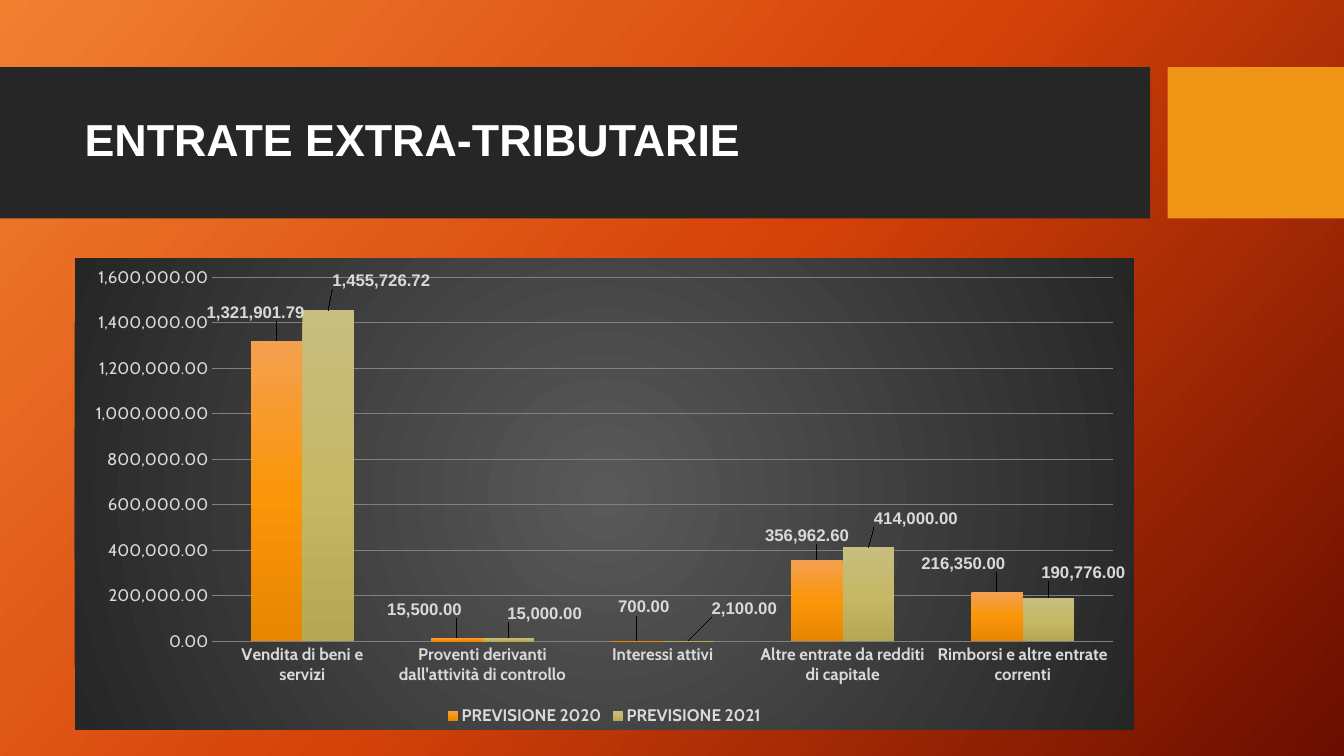
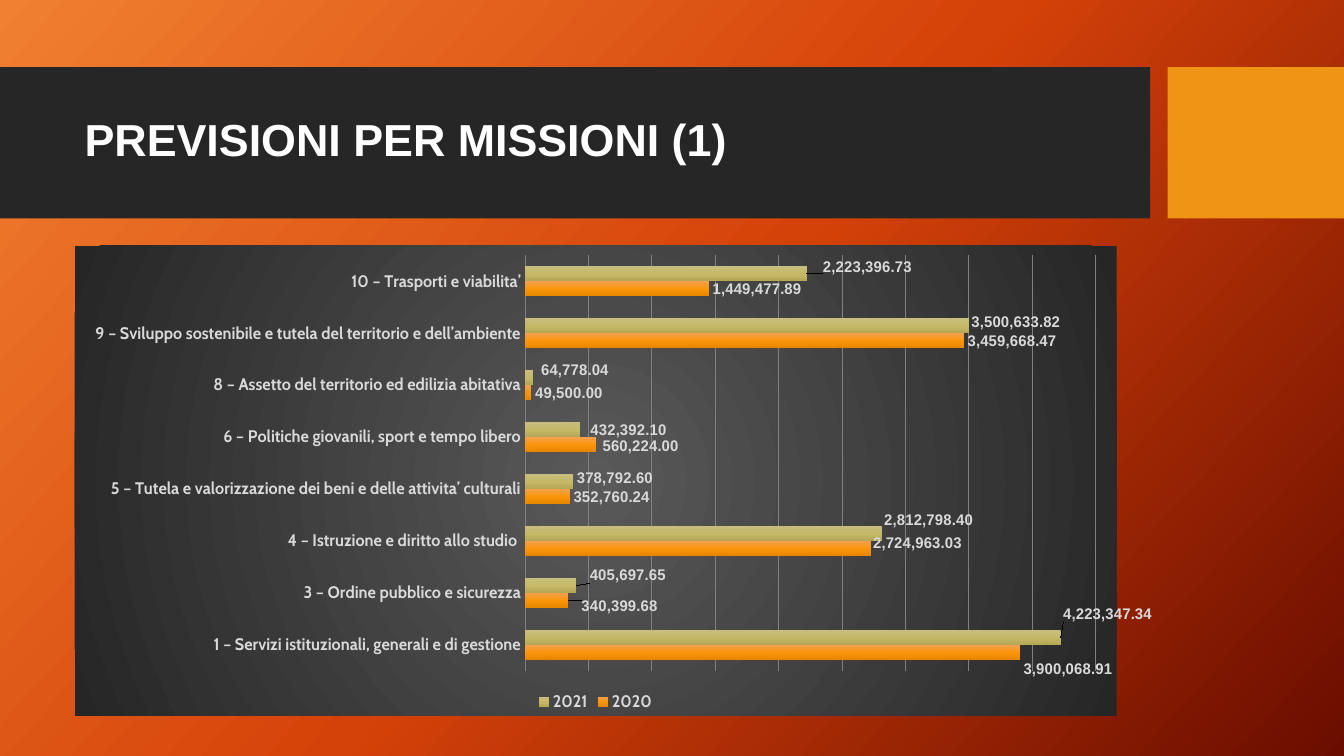
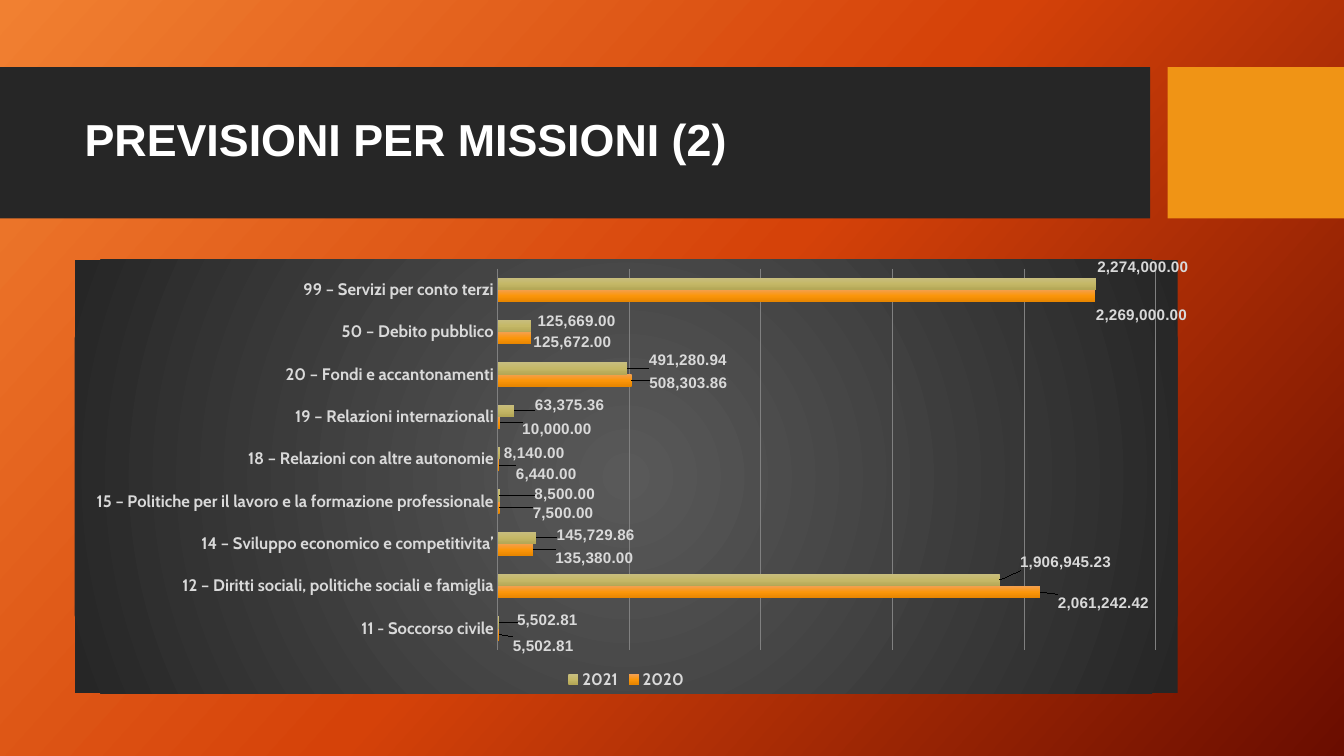
"""Build three budget slides, each with a banded title and a clustered chart."""
from dataclasses import dataclass

from pptx import Presentation
from pptx.chart.data import CategoryChartData
from pptx.dml.color import RGBColor
from pptx.enum.chart import XL_CHART_TYPE, XL_LABEL_POSITION, XL_LEGEND_POSITION, XL_TICK_MARK
from pptx.enum.shapes import MSO_SHAPE
from pptx.enum.text import MSO_ANCHOR
from pptx.oxml import parse_xml
from pptx.oxml.ns import nsdecls, qn
from pptx.util import Pt

COLUMNS = XL_CHART_TYPE.COLUMN_CLUSTERED
BARS = XL_CHART_TYPE.BAR_CLUSTERED
OUTSIDE_END = XL_LABEL_POSITION.OUTSIDE_END
LEGEND_BOTTOM = XL_LEGEND_POSITION.BOTTOM
NO_TICKS = XL_TICK_MARK.NONE
RECTANGLE = MSO_SHAPE.RECTANGLE
MIDDLE = MSO_ANCHOR.MIDDLE
FILL_TAGS = [qn(f"a:{name}") for name in ("noFill", "solidFill", "gradFill")]


@dataclass(frozen=True)
class Theme:
    """Hold the colours, fonts and type sizes shared by the slides."""

    band: str = "262626"
    accent: str = "F09415"
    title: str = "FFFFFF"
    label: str = "D9D9D9"
    grid: str = "808080"
    backdrop: tuple = ((0, "F18031"), (50, "D54209"), (100, "6A0D00"))
    panel: tuple = ((0, "595959"), (100, "262626"))
    series: tuple = (
        ((0, "F4A050"), (50, "FB960A"), (100, "E88600")),
        ((0, "C8BE7F"), (50, "C5B867"), (100, "B4A756")),
    )
    heading_font: str = "Arial"
    chart_font: str = "Cabin"
    title_size: int = 32
    axis_size: int = 12
    base_size: int = 10
    number_format: str = "#,##0.00"


THEME = Theme()


@dataclass(frozen=True)
class Series:
    """Hold one chart series and its label shifts in points."""

    name: str
    values: tuple
    shifts: dict


@dataclass(frozen=True)
class Budget:
    """Hold the content of one slide."""

    title: str
    kind: int
    frame: tuple
    maximum: int
    step: int
    label_size: int
    categories: tuple
    series: tuple


BUDGETS = (
    Budget(
        "ENTRATE EXTRA-TRIBUTARIE", COLUMNS, (53.3, 184.3, 756.7, 337), 1600000, 200000, 12,
        (
            "Vendita di beni e servizi",
            "Proventi derivanti dall'attività di controllo",
            "Interessi attivi",
            "Altre entrate da redditi di capitale",
            "Rimborsi e altre entrate correnti",
        ),
        (
            Series(
                "PREVISIONE 2020",
                (1321901.79, 15500, 700, 356962.6, 216350),
                {0: (-15, -11), 1: (-23, -11), 2: (5, -15), 3: (-7, -8), 4: (-24, -11)},
            ),
            Series(
                "PREVISIONE 2021",
                (1455726.72, 15000, 2100, 414000, 190776),
                {0: (38, -12), 1: (26, -8), 2: (40, -14), 3: (34, -11), 4: (25, -9)},
            ),
        ),
    ),
    Budget(
        "PREVISIONI PER MISSIONI (1)", BARS, (53.3, 175.7, 769.7, 335.5), 4500000, 500000, 11,
        (
            "1 – Servizi istituzionali, generali e di gestione",
            "3 – Ordine pubblico e sicurezza",
            "4 – Istruzione e diritto allo studio ",
            "5 – Tutela e valorizzazione dei beni e delle attivita’ culturali",
            "6 – Politiche giovanili, sport e tempo libero",
            "8 – Assetto del territorio ed edilizia abitativa",
            "9 – Sviluppo sostenibile e tutela del territorio e dell’ambiente",
            "10 – Trasporti e viabilita’",
        ),
        (
            Series(
                "2020",
                (3900068.91, 340399.68, 2724963.03, 352760.24, 560224, 49500,
                 3459668.47, 1449477.89),
                {0: (0, 12), 1: (7, 4), 2: (-1, -4), 4: (2, 1)},
            ),
            Series(
                "2021",
                (4223347.34, 405697.65, 2812798.4, 378792.6, 432392.1, 64778.04,
                 3500633.82, 2223396.73),
                {0: (-1, -17), 1: (7, -8), 2: (-1, -10), 3: (0, -3), 4: (5, 0),
                 5: (3, -6), 6: (-1, -3), 7: (9, -5)},
            ),
        ),
    ),
    Budget(
        "PREVISIONI PER MISSIONI (2)", BARS, (53.3, 184.3, 795.6, 311), 2500000, 500000, 11,
        (
            "11 - Soccorso civile",
            "12 – Diritti sociali, politiche sociali e famiglia",
            "14 – Sviluppo economico e competitivita’",
            "15 – Politiche per il lavoro e la formazione professionale",
            "18 – Relazioni con altre autonomie",
            "19 – Relazioni internazionali",
            "20 – Fondi e accantonamenti",
            "50 – Debito pubblico",
            "99 – Servizi per conto terzi",
        ),
        (
            Series(
                "2020",
                (5502.81, 2061242.42, 135380, 7500, 6440, 10000, 508303.86, 125672, 2269000),
                {0: (7, 8), 1: (10, 8), 2: (13, 6), 3: (21, 4), 4: (9, 6), 5: (13, 4),
                 6: (10, 2), 7: (-1, 3), 8: (-2, 14)},
            ),
            Series(
                "2021",
                (5502.81, 1906945.23, 145729.86, 8500, 8140, 63375.36, 491280.94, 125669,
                 2274000),
                {0: (10, -2), 1: (12, -13), 2: (12, -2), 3: (22, -1), 5: (12, -4),
                 6: (13, -6), 7: (2, -4), 8: (-2, -12)},
            ),
        ),
    ),
)


def style_font(font, size, color=THEME.label, name=THEME.chart_font, bold=True):
    """Set the size, colour, typeface and weight of a font."""
    font.size = Pt(size)
    font.color.rgb = RGBColor.from_string(color)
    font.name = name
    font.bold = bold


def paint_gradient(properties, stops, angle=None):
    """Give a properties element a linear gradient, or a radial one without an angle."""
    for child in list(properties):
        if child.tag in FILL_TAGS:
            properties.remove(child)
    marks = "".join(
        f'<a:gs pos="{place * 1000}"><a:srgbClr val="{color}"/></a:gs>' for place, color in stops
    )
    if angle is None:
        shade = ('<a:path path="circle"><a:fillToRect l="50000" t="50000" r="50000" b="50000"/>'
                 "</a:path>")
    else:
        shade = f'<a:lin ang="{angle * 60000}" scaled="0"/>'
    properties.insert(0, parse_xml(
        f'<a:gradFill {nsdecls("a")} rotWithShape="1"><a:gsLst>{marks}</a:gsLst>{shade}</a:gradFill>'
    ))


def paint_backdrop(master):
    """Give the slide master its gradient background."""
    master.background.fill.solid()
    paint_gradient(master.element.find(f".//{qn('p:bgPr')}"), THEME.backdrop, 42)


def add_block(page, frame, color):
    """Add a plain filled rectangle."""
    block = page.shapes.add_shape(RECTANGLE, *map(Pt, frame))
    block.shadow.inherit = False
    block.fill.solid()
    block.fill.fore_color.rgb = RGBColor.from_string(color)
    block.line.fill.background()


def add_text(page, text, frame, **font_format):
    """Add a wrapped, vertically centred text box."""
    box = page.shapes.add_textbox(*map(Pt, frame))
    box.text_frame.word_wrap = True
    box.text_frame.vertical_anchor = MIDDLE
    para = box.text_frame.paragraphs[0]
    para.line_spacing = 0.9
    span = para.add_run()
    span.text = text
    style_font(span.font, **font_format)


def add_header(page, title):
    """Add the dark title band, the accent block and the title."""
    add_block(page, (0, 48, 821.5, 108), THEME.band)
    add_block(page, (834, 48, 126, 108), THEME.accent)
    add_text(page, title, (53.3, 59, 756.7, 85), size=THEME.title_size,
             color=THEME.title, name=THEME.heading_font)


def paint_panel(chart):
    """Fill the chart area with a radial gradient and no outline."""
    panel = parse_xml(f'<c:spPr {nsdecls("c", "a")}><a:ln><a:noFill/></a:ln></c:spPr>')
    paint_gradient(panel, THEME.panel)
    chart.element.find(qn("c:chart")).addnext(panel)


def style_axes(chart, budget):
    """Format the axes, gridlines and scale of a chart."""
    for axis in (chart.category_axis, chart.value_axis):
        axis.major_tick_mark = NO_TICKS
        axis.minor_tick_mark = NO_TICKS
        axis.format.line.fill.background()
        style_font(axis.tick_labels.font, THEME.axis_size, bold=axis is not chart.value_axis)
    style_font(chart.category_axis.tick_labels.font, THEME.axis_size)
    scale = chart.value_axis
    style_font(scale.tick_labels.font, THEME.axis_size, bold=False)
    scale.visible = budget.kind == COLUMNS
    scale.minimum_scale = 0
    scale.maximum_scale = budget.maximum
    scale.major_unit = budget.step
    scale.tick_labels.number_format = THEME.number_format
    scale.tick_labels.number_format_is_linked = False
    grid = scale.major_gridlines.format.line
    grid.color.rgb = RGBColor.from_string(THEME.grid)
    grid.width = Pt(0.75)


def style_labels(series, element, shifts, frame, size):
    """Show the values of a series and move single labels by their shifts."""
    labels = series.data_labels
    labels.show_value = True
    labels.position = OUTSIDE_END
    labels.number_format = THEME.number_format
    labels.number_format_is_linked = False
    style_font(labels.font, size, name=THEME.heading_font)
    for index in shifts:
        label = series.points[index].data_label
        label.position = OUTSIDE_END
        style_font(label.font, size, name=THEME.heading_font)
    for entry in element.iter(qn("c:dLbl")):
        mark = entry.find(qn("c:idx"))
        right, down = shifts[int(mark.get("val"))]
        mark.addnext(parse_xml(
            f'<c:layout {nsdecls("c")}><c:manualLayout><c:x val="{right / frame[2]:.4f}"/>'
            f'<c:y val="{down / frame[3]:.4f}"/></c:manualLayout></c:layout>'
        ))


def add_budget_chart(page, budget):
    """Add the clustered chart of a budget."""
    data = CategoryChartData(number_format=THEME.number_format)
    data.categories = budget.categories
    for entry in budget.series:
        data.add_series(entry.name, entry.values)
    chart = page.shapes.add_chart(budget.kind, *map(Pt, budget.frame), data).chart
    style_font(chart.font, THEME.base_size, color=THEME.title, bold=False)
    chart.has_title = False
    chart.has_legend = True
    chart.legend.position = LEGEND_BOTTOM
    chart.legend.include_in_layout = False
    style_font(chart.legend.font, THEME.axis_size)
    paint_panel(chart)
    style_axes(chart, budget)
    plot = chart.plots[0]
    plot.gap_width = 150
    plot.overlap = 0
    plot.vary_by_categories = False
    elements = chart.element.iter(qn("c:ser"))
    for series, element, entry, stops in zip(plot.series, elements, budget.series, THEME.series):
        series.format.fill.solid()
        series.invert_if_negative = False
        paint_gradient(element.find(qn("c:spPr")), stops, 90)
        style_labels(series, element, entry.shifts, budget.frame, budget.label_size)


def main():
    """Build and save the deck."""
    deck = Presentation()
    deck.slide_width, deck.slide_height = Pt(960), Pt(540)
    paint_backdrop(deck.slide_master)
    for budget in BUDGETS:
        page = deck.slides.add_slide(deck.slide_layouts[6])
        add_header(page, budget.title)
        add_budget_chart(page, budget)
    deck.save("out.pptx")


if __name__ == "__main__":
    main()
